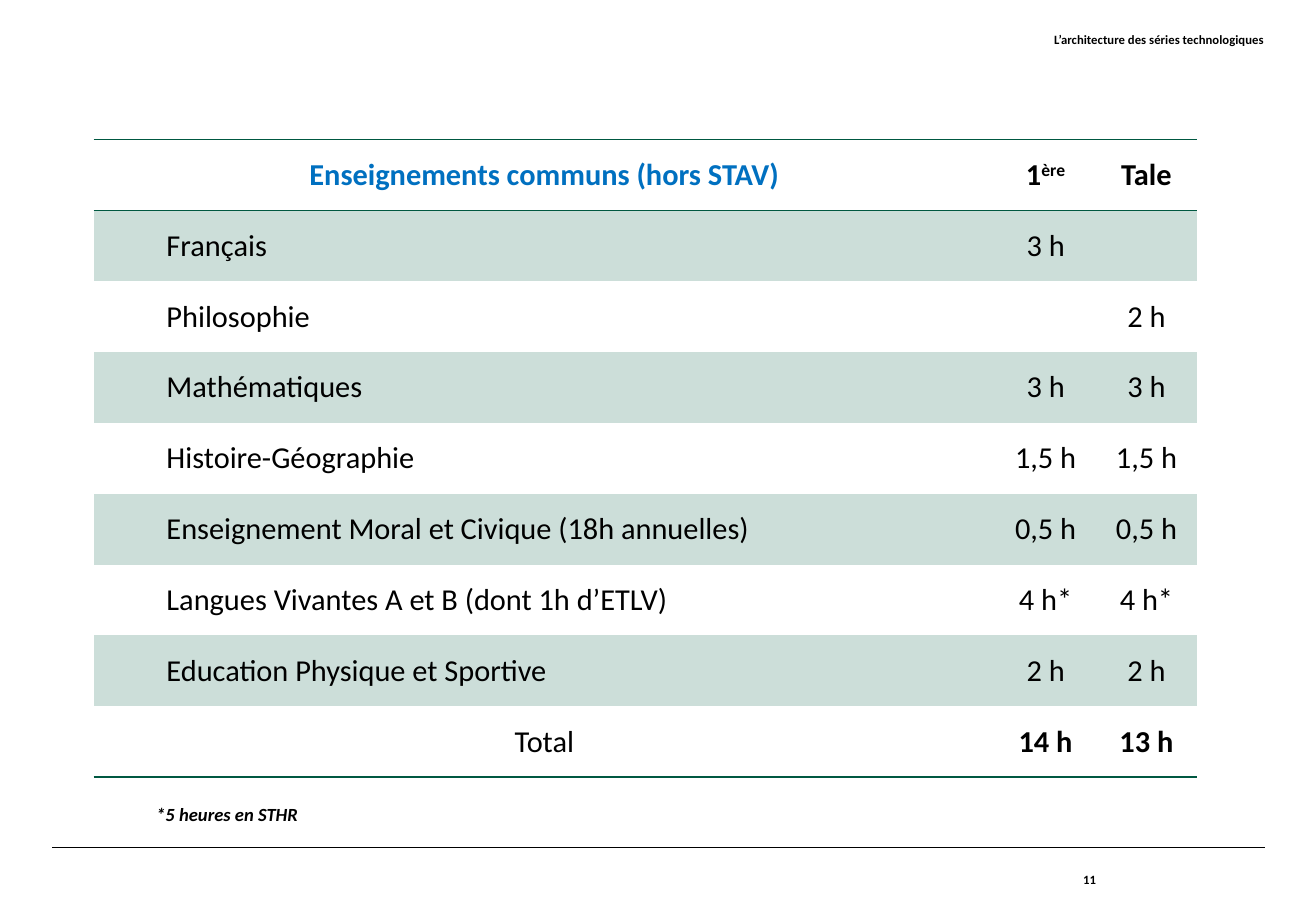
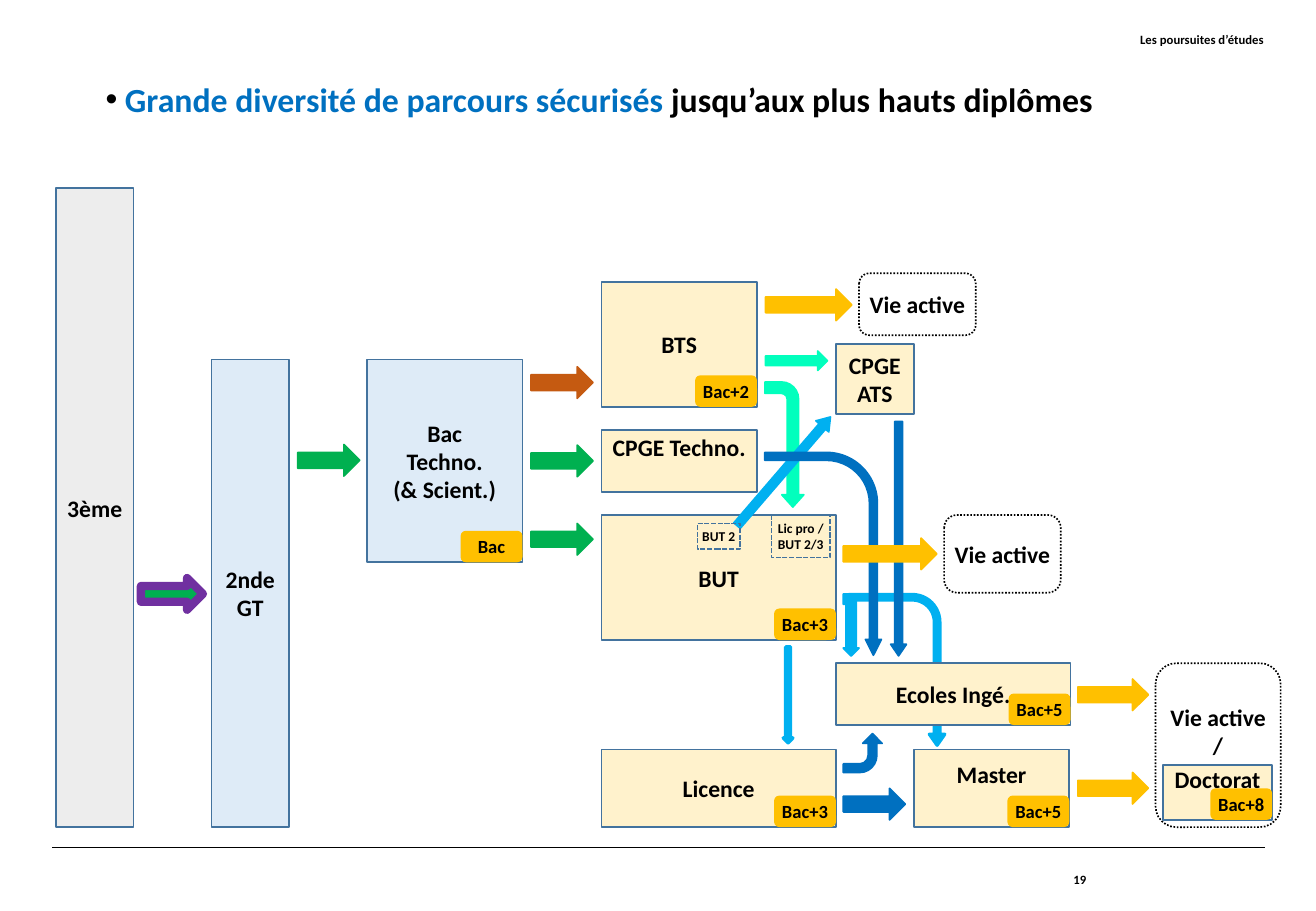
"""Builds two slides on technological courses and further studies."""
from lxml.etree import SubElement
from pptx import Presentation
from pptx.dml.color import RGBColor
from pptx.enum.dml import MSO_LINE_DASH_STYLE as DASH
from pptx.enum.shapes import MSO_CONNECTOR, MSO_SHAPE as SHAPE
from pptx.enum.text import MSO_ANCHOR as ANCHOR, PP_ALIGN as ALIGN
from pptx.oxml.ns import qn
from pptx.util import Inches, Pt

COLORS = {
    "black": "000000", "title": "0070C0", "green": "005841", "band": "CCDED9",
    "cream": "FFF2CC", "pale": "DEEBF7", "grey": "EDEDED", "edge": "43739E",
    "gold": "FFC000", "sky": "00B0F0", "mint": "02FFBD", "navy": "0070C0",
    "leaf": "00B050", "rust": "C55A11", "purple": "7030A0",
}
FONT = "Calibri"
NO_STYLE = "{2D5ABB26-0587-4C30-8999-92F81FD0307C}"


def rgb(name):
    return RGBColor.from_string(COLORS[name])


class Deck:
    def __init__(self):
        self.prs = Presentation()
        self.prs.slide_width, self.prs.slide_height = Inches(10.83), Inches(7.5)
        self.s = None

    def slide(self, header, number, number_left):
        self.s = self.prs.slides.add_slide(self.prs.slide_layouts[6])
        line = self.s.shapes.add_connector(
            MSO_CONNECTOR.STRAIGHT, Inches(0.43), Inches(6.98), Inches(10.41), Inches(6.98))
        line.line.color.rgb = rgb("black")
        line.line.width = Pt(0.8)
        SubElement(line.element.spPr, qn("a:effectLst"))
        self.text(header, 3.92, 0.26, 6.48, 0.52, 7.5, ALIGN.RIGHT, ANCHOR.TOP)
        self.text(number, number_left, 6.98, 1.6, 0.52, 7.5, ALIGN.RIGHT)

    def style(self, p, size, align=ALIGN.CENTER, bold=True, color="black"):
        p.alignment = align
        for r in p.runs:
            r.font.name, r.font.size, r.font.bold = FONT, Pt(size), bold
            r.font.color.rgb = rgb(color)

    def fill_frame(self, tf, text, size, align, anchor, insets, wrap):
        tf.text = text
        tf.word_wrap = wrap
        tf.vertical_anchor = anchor
        tf.margin_left, tf.margin_top, tf.margin_right, tf.margin_bottom = map(Inches, insets)
        for p in tf.paragraphs:
            self.style(p, size, align)

    def text(self, text, x, y, w, h, size, align=ALIGN.CENTER, anchor=ANCHOR.MIDDLE,
             insets=(0, 0, 0, 0)):
        sp = self.s.shapes.add_textbox(Inches(x), Inches(y), Inches(w), Inches(h))
        self.fill_frame(sp.text_frame, text, size, align, anchor, insets, True)
        return sp.text_frame.paragraphs[0]

    def title(self, lead, rest):
        p = self.text(lead, 0.38, 0.6, 10.32, 0.87, 20, ALIGN.LEFT, ANCHOR.TOP,
                      (0.1, 0.05, 0.1, 0.05))
        pPr = p._p.get_or_add_pPr()
        pPr.set("marL", str(Inches(0.55)))
        pPr.set("indent", str(Inches(-0.16)))
        SubElement(SubElement(pPr, qn("a:buClr")), qn("a:srgbClr"), val=COLORS["black"])
        SubElement(pPr, qn("a:buFont"), typeface="Arial")
        SubElement(pPr, qn("a:buChar"), char="•")
        p.add_run().text = rest
        self.style(p, 20, ALIGN.LEFT)
        p.runs[0].font.color.rgb = rgb("title")

    def shape(self, kind, x, y, w, h, fill=None, line=None, width=1, dash=None):
        sp = self.s.shapes.add_shape(kind, Inches(x), Inches(y), Inches(w), Inches(h))
        sp.shadow.inherit = False
        if fill:
            sp.fill.solid()
            sp.fill.fore_color.rgb = rgb(fill)
        else:
            sp.fill.background()
        if line:
            sp.line.color.rgb = rgb(line)
            sp.line.width = Pt(width)
            sp.line.dash_style = dash
        else:
            sp.line.fill.background()
        return sp

    def box(self, text, x, y, w, h, fill="cream", badge=None, size=14, line="edge",
            kind=SHAPE.RECTANGLE, dash=None, raised=False):
        sp = self.shape(kind, x, y, w, h, fill, line, 1, dash)
        insets = (0.04, 0, 0.04, 0.23) if raised else (0.04,) * 4
        self.fill_frame(sp.text_frame, text, size, ALIGN.CENTER, ANCHOR.MIDDLE, insets, False)
        if badge:
            self.box(badge, x + w - 0.51, y + h - 0.26, 0.51, 0.26, "gold", None, 11, None,
                     SHAPE.ROUNDED_RECTANGLE)

    def exit(self, text, x, y, w, h, raised=False):
        self.box(text, x, y, w, h, None, line="black", kind=SHAPE.ROUNDED_RECTANGLE,
                 dash=DASH.ROUND_DOT, raised=raised)

    def arrow(self, color, x, y, w=0.51, h=0.26, rot=0, adj=(), flip="", line=None, width=1,
              kind=SHAPE.RIGHT_ARROW):
        sp = self.shape(kind, x, y, w, h, color, line or color, width)
        sp.rotation = rot
        for i, value in enumerate(adj):
            sp.adjustments[i] = value
        for axis in flip:
            sp.element.spPr.xfrm.set("flip" + axis, "1")

    def bent(self, color, x, y, w, h, rot, adj, flip="", width=1):
        self.arrow(color, x, y, w, h, rot, adj, flip, width=width, kind=SHAPE.BENT_ARROW)

    def border(self, cell, side):
        ln = SubElement(cell._tc.get_or_add_tcPr(), qn("a:ln" + side), w=str(Pt(1)))
        SubElement(SubElement(ln, qn("a:solidFill")), qn("a:srgbClr"), val=COLORS["green"])

    def table(self, rows, x, y, widths, row_height):
        frame = self.s.shapes.add_table(len(rows), len(widths), Inches(x), Inches(y),
                                        Inches(sum(widths)), Inches(row_height * len(rows)))
        table = frame.table
        table.first_row = table.horz_banding = False
        table._tbl.tblPr.find(qn("a:tableStyleId")).text = NO_STYLE
        for column, width in zip(table.columns, widths):
            column.width = Inches(width)
        last = len(rows) - 1
        for i, row in enumerate(rows):
            table.rows[i].height = Inches(row_height)
            for j, value in enumerate(row):
                cell = table.cell(i, j)
                cell.vertical_anchor = ANCHOR.MIDDLE
                cell.text_frame.text = value
                sides = {0: "TB", last: "B"}.get(i, "")
                for side in sides:
                    self.border(cell, side)
                if i % 2:
                    cell.fill.solid()
                    cell.fill.fore_color.rgb = rgb("band")
                else:
                    cell.fill.background()
                subject = j == 0 and not sides
                if subject:
                    cell.margin_left = Inches(0.6)
                self.style(cell.text_frame.paragraphs[0], 18,
                           ALIGN.LEFT if subject else ALIGN.CENTER,
                           i == 0 or (i == last and j > 0),
                           "title" if i == j == 0 else "black")
        return table


def common_courses(deck):
    deck.slide("L’architecture des séries technologiques", "11", 7.42)
    table = deck.table([
        ("Enseignements communs (hors STAV)", "1", "Tale"),
        ("Français", "3 h", ""),
        ("Philosophie", "", "2 h"),
        ("Mathématiques", "3 h", "3 h"),
        ("Histoire-Géographie", "1,5 h", "1,5 h"),
        ("Enseignement Moral et Civique (18h annuelles)", "0,5 h", "0,5 h"),
        ("Langues Vivantes A et B (dont 1h d’ETLV)", "4 h*", "4 h*"),
        ("Education Physique et Sportive", "2 h", "2 h"),
        ("Total", "14 h", "13 h"),
    ], 0.77, 1.15, (7.42, 0.83, 0.83), 5.25 / 9)
    p = table.cell(0, 1).text_frame.paragraphs[0]
    r = p.add_run()
    r.text = "ère"
    deck.style(p, 18)
    r._r.get_or_add_rPr().set("baseline", "30000")
    note = deck.text("*5 heures en STHR", 0.69, 6.51, 2.36, 0.39, 11)
    note.runs[0].font.italic = True


def further_studies(deck):
    deck.slide("Les poursuites d’études", "19", 7.34)
    deck.title("Grande diversité de parcours sécurisés ", "jusqu’aux plus hauts diplômes")

    deck.bent("sky", 6.76, 5.12, 1.24, 0.79, 270, (0.057, 0.08, 0.114, 0.287), "HV", 2)
    deck.arrow("sky", 6.09, 5.68, 0.79, 0.08, 90, width=2)
    deck.bent("mint", 5.94, 3.5, 1.03, 0.32, 90, (0.294, 0.283, 0.316, 0.438))
    deck.box("BUT", 4.95, 4.24, 1.93, 1.03, badge="Bac+3")
    deck.arrow("sky", 5.86, 3.81, 1.18, 0.14, 310.7, (0.5, 0.731))

    deck.box("3ème", 0.46, 1.55, 0.64, 5.26, "grey")
    deck.box("2nde\nGT", 1.74, 2.96, 0.64, 3.85, "pale")
    deck.box("Bac\nTechno.\n(& Scient.)", 3.02, 2.96, 1.28, 1.67, "pale", "Bac")
    deck.box("BTS", 4.95, 2.32, 1.28, 1.03, badge="Bac+2")
    deck.box("CPGE Techno.", 4.95, 3.54, 1.28, 0.51, raised=True)
    deck.box("CPGE\nATS", 6.88, 2.83, 0.64, 0.58)
    deck.box("Licence", 4.95, 6.17, 1.93, 0.64, badge="Bac+3")
    deck.box("Master", 7.52, 6.17, 1.28, 0.64, badge="Bac+5", raised=True)
    deck.box("Ecoles Ingé.", 6.88, 5.46, 1.93, 0.51, badge="Bac+5")

    deck.arrow("leaf", 1.16, 4.76, line="purple", width=5)
    deck.arrow("leaf", 2.45, 3.66)
    for i, color in enumerate(("rust", "leaf", "leaf")):
        deck.arrow(color, 4.37, 3.02 + 0.645 * i)
    deck.arrow("gold", 6.3, 2.38, 0.71)
    deck.arrow("mint", 6.3, 2.89, h=0.16)
    deck.bent("navy", 6.94, 6.04, 0.32, 0.32, 90, (0.224, 0.25, 0.25, 0.438), "H")
    deck.bent("sky", 6.75, 5.08, 0.51, 0.13, 270, (0.644, 0.5, 0.5, 0.296), "HV")
    deck.bent("navy", 5.94, 4.08, 1.67, 0.96, 270, (0.068, 0.069, 0.136, 0.438), "HV")
    deck.arrow("navy", 6.43, 4.37, 1.93, 0.13, 90, (0.5, 0.731))
    deck.arrow("gold", 6.94, 4.43, 0.77)
    deck.arrow("navy", 6.94, 6.49)
    for y in (5.59, 6.36):
        deck.arrow("gold", 8.87, y, 0.58)

    for text, x, y, w, h in (("Lic pro /\nBUT 2/3", 6.35, 4.24, 0.48, 0.35),
                             ("BUT 2", 5.74, 4.31, 0.35, 0.21)):
        deck.box(text, x, y, w, h, None, size=8, dash=DASH.SQUARE_DOT)
    deck.exit("Vie active", 7.07, 2.25, 0.96, 0.51)
    deck.exit("Vie active", 7.77, 4.24, 0.96, 0.64)
    deck.exit("Vie active\n/", 9.51, 5.46, 1.03, 1.35, raised=True)
    deck.box("Doctorat", 9.57, 6.3, 0.9, 0.45, badge="Bac+8", raised=True)


def main():
    deck = Deck()
    common_courses(deck)
    further_studies(deck)
    deck.prs.save("out.pptx")


if __name__ == "__main__":
    main()
